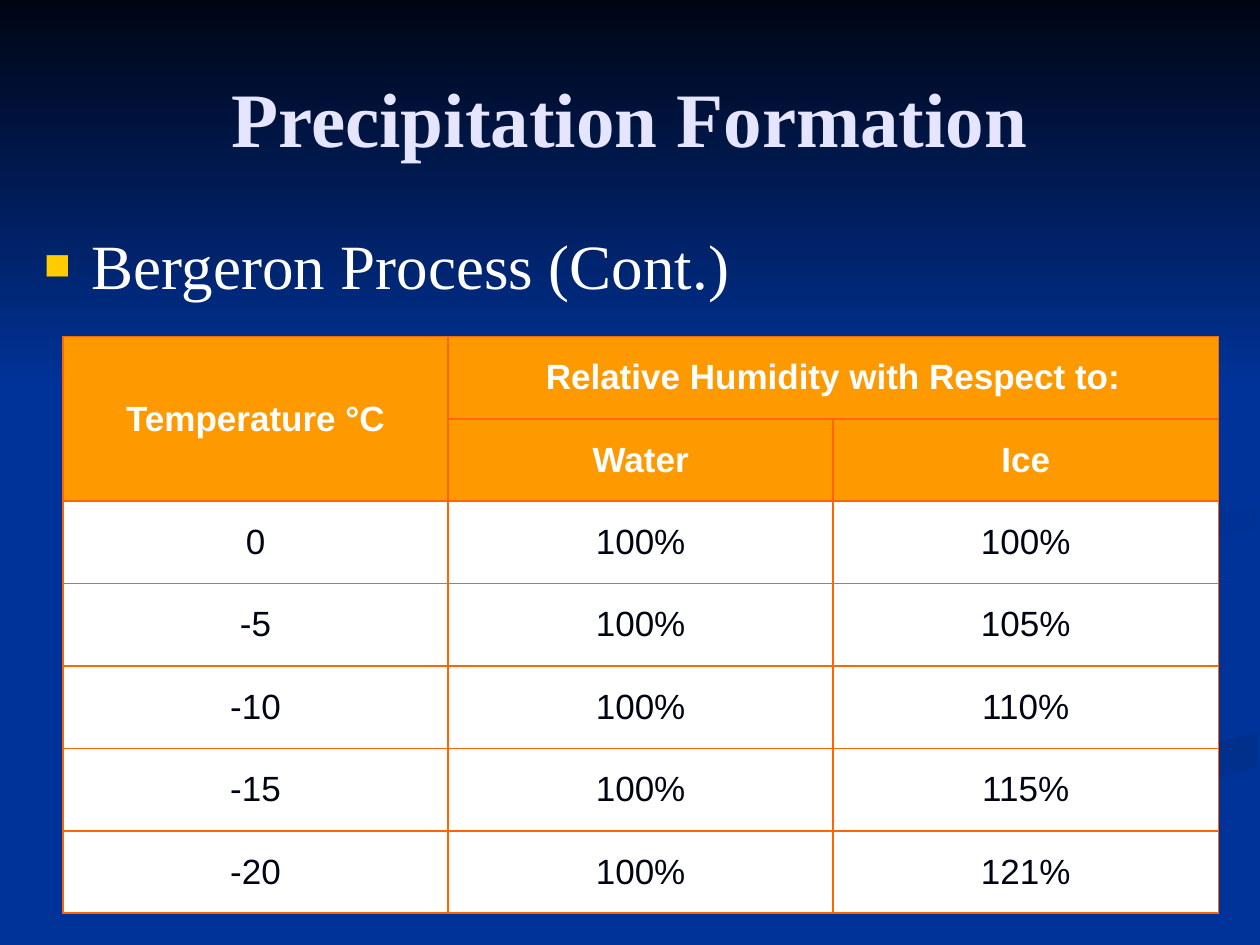
import dataclasses

import pptx
import pptx.dml.color
import pptx.enum.shapes
import pptx.enum.text
import pptx.oxml
import pptx.oxml.ns
import pptx.util

Inches = pptx.util.Inches


@dataclasses.dataclass(frozen=True)
class Theme:
    """Colours, fonts and type sizes of the slide."""

    background: str = "003399"
    night: str = "000514"
    ribbon: str = "002F8C"
    title: str = "E5E5FF"
    light: str = "FFFFFF"
    bullet: str = "FFCC00"
    header: str = "FF9900"
    border: str = "FF6600"
    serif: str = "Times New Roman"
    sans: str = "Arial"
    title_size: int = 44
    body_size: int = 36
    table_size: int = 20


THEME = Theme()

LOWER_RIBBON = [(5.03, 7.49), (5.71, 7.49), (7.22, 6.82), (9.98, 6.09), (9.98, 5.81), (7.64, 6.47)]
UPPER_RIBBON = [(7.81, 4.6), (8.26, 4.96), (8.05, 4.72), (8.43, 4.48), (9.98, 4.2), (9.98, 4.02),
                (8.35, 4.3)]

HEADERS = [["Temperature °C", "Relative Humidity with Respect to:", ""], ["", "Water", "Ice"]]
HUMIDITY = [["0", "100%", "100%"], ["-5", "100%", "105%"], ["-10", "100%", "110%"],
            ["-15", "100%", "115%"], ["-20", "100%", "121%"]]


def rgb(value):
    """Return the colour object for a hex string."""
    return pptx.dml.color.RGBColor.from_string(value)


def format_text(paragraph, font_name, size, colour, bold=False):
    """Format every run of a paragraph."""
    for run in paragraph.runs:
        run.font.name = font_name
        run.font.size = pptx.util.Pt(size)
        run.font.bold = bold
        run.font.color.rgb = rgb(colour)


def fade_into_background(shape, colour, angle):
    """Fill a shape with a gradient that ends in the background colour."""
    shape.shadow.inherit = False
    shape.line.fill.background()
    shape.fill.gradient()
    shape.fill.gradient_angle = angle
    for stop, stop_colour in zip(shape.fill.gradient_stops, (colour, THEME.background)):
        stop.color.rgb = rgb(stop_colour)


def add_ribbon(slide, points, angle):
    """Add a closed ribbon outline behind the content."""
    vertices = [(Inches(x), Inches(y)) for x, y in points]
    builder = slide.shapes.build_freeform(*vertices[0], scale=1.0)
    builder.add_line_segments(vertices[1:], close=True)
    fade_into_background(builder.convert_to_shape(), THEME.ribbon, angle)


def add_sky(slide):
    """Add the dark band across the top."""
    sky = slide.shapes.add_shape(pptx.enum.shapes.MSO_SHAPE.RECTANGLE, 0, 0,
                                 Inches(10), Inches(3.08))
    fade_into_background(sky, THEME.night, 270)


def place_placeholder(slide, placeholder, text, box):
    """Fill a placeholder, move it and bring it in front of the backdrop."""
    placeholder.left, placeholder.top, placeholder.width, placeholder.height = map(Inches, box)
    placeholder.text_frame.text = text
    slide.shapes._spTree.append(placeholder._element)
    return placeholder.text_frame


def set_bullet(paragraph):
    """Give a paragraph a hanging square bullet."""
    properties = paragraph._p.get_or_add_pPr()
    properties.set("marL", str(Inches(0.38)))
    properties.set("indent", str(-Inches(0.38)))
    namespace = pptx.oxml.ns.nsdecls("a")
    for xml in (f'<a:buClr {namespace}><a:srgbClr val="{THEME.bullet}"/></a:buClr>',
                f'<a:buSzPct {namespace} val="70000"/>',
                f'<a:buFont {namespace} typeface="{THEME.sans}"/>',
                f'<a:buChar {namespace} char="■"/>'):
        properties.append(pptx.oxml.parse_xml(xml))


def set_borders(cell):
    """Draw a thin line on all four sides of a cell."""
    properties = cell._tc.get_or_add_tcPr()
    for index, side in enumerate(("lnL", "lnR", "lnT", "lnB")):
        line = pptx.oxml.parse_xml(
            f'<a:{side} {pptx.oxml.ns.nsdecls("a")} w="{pptx.util.Pt(1)}"><a:solidFill>'
            f'<a:srgbClr val="{THEME.border}"/></a:solidFill></a:{side}>')
        properties.insert(index, line)


def add_humidity_table(slide):
    """Add the humidity table with its two merged header cells."""
    rows = HEADERS + HUMIDITY
    frame = slide.shapes.add_table(len(rows), len(rows[0]), Inches(0.5), Inches(2.67),
                                   Inches(9.17), Inches(4.58))
    table = frame.table
    table.first_row = table.horz_banding = False
    for row_index, row in enumerate(rows):
        is_header = row_index < len(HEADERS)
        for column_index, text in enumerate(row):
            cell = table.cell(row_index, column_index)
            cell.text_frame.text = text
            cell.vertical_anchor = pptx.enum.text.MSO_ANCHOR.MIDDLE
            cell.fill.solid()
            cell.fill.fore_color.rgb = rgb(THEME.header if is_header else THEME.light)
            set_borders(cell)
            paragraph = cell.text_frame.paragraphs[0]
            paragraph.alignment = pptx.enum.text.PP_ALIGN.CENTER
            format_text(paragraph, THEME.sans, THEME.table_size,
                        THEME.light if is_header else THEME.night, is_header)
    table.cell(0, 0).merge(table.cell(1, 0))
    table.cell(0, 1).merge(table.cell(0, 2))


def main():
    """Build and save the slide."""
    presentation = pptx.Presentation()
    presentation.slide_width, presentation.slide_height = Inches(10), Inches(7.5)
    slide = presentation.slides.add_slide(presentation.slide_layouts[1])
    slide.background.fill.solid()
    slide.background.fill.fore_color.rgb = rgb(THEME.background)
    add_ribbon(slide, LOWER_RIBBON, 270)
    add_ribbon(slide, UPPER_RIBBON, 315)
    add_sky(slide)

    title = place_placeholder(slide, slide.shapes.title, "Precipitation Formation",
                              (0.25, 0.3, 9.5, 1.25))
    title.vertical_anchor = pptx.enum.text.MSO_ANCHOR.MIDDLE
    title.paragraphs[0].alignment = pptx.enum.text.PP_ALIGN.CENTER
    format_text(title.paragraphs[0], THEME.serif, THEME.title_size, THEME.title, True)

    body = place_placeholder(slide, slide.placeholders[1], "Bergeron Process (Cont.)",
                             (0.25, 1.75, 9.5, 0.83))
    set_bullet(body.paragraphs[0])
    format_text(body.paragraphs[0], THEME.serif, THEME.body_size, THEME.light)

    add_humidity_table(slide)
    presentation.save("out.pptx")


if __name__ == "__main__":
    main()
